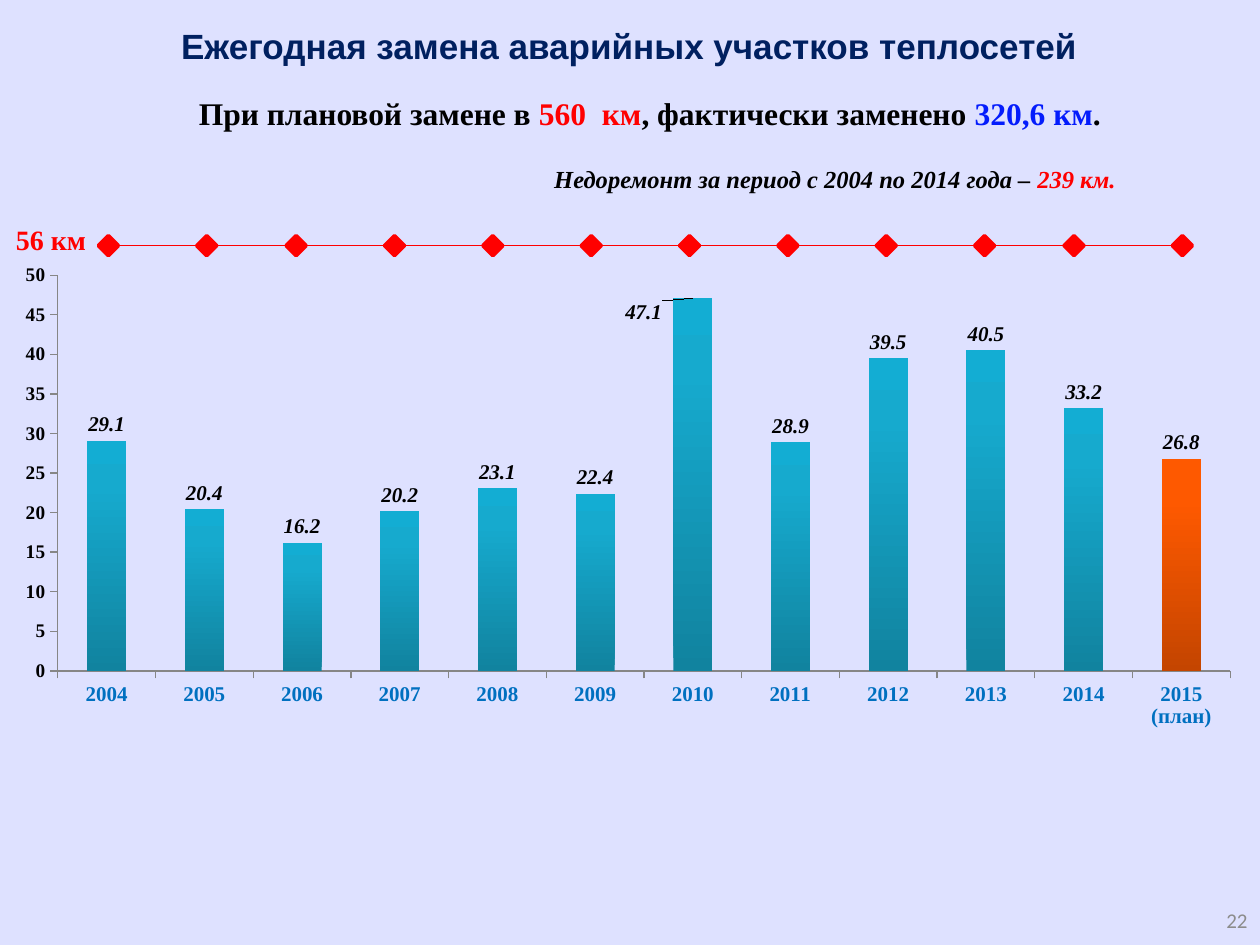
import copy
import itertools
from typing import NamedTuple

import pptx
import pptx.chart.data
import pptx.dml.color
import pptx.enum.chart
import pptx.enum.shapes
import pptx.enum.text
import pptx.oxml
import pptx.oxml.ns
import pptx.util

Pt = pptx.util.Pt
Align = pptx.enum.text.PP_ALIGN
Anchor = pptx.enum.text.MSO_ANCHOR

COLORS = {
    "background": "DEE1FF", "black": "000000", "red": "FF0000", "blue": "041CFC",
    "navy": "002060", "year": "0070C0", "axis": "868686", "number": "8C8C8C",
}
ACTUAL_STOPS = [(0, "11839F"), (0.8, "16AACE"), (1, "13ADD3")]
PLAN_STOPS = [(0, "C44500"), (0.8, "FE5900"), (1, "FF5A00")]
SERIF = "Times New Roman"

REPLACED_KM = {
    "2004": 29.1, "2005": 20.4, "2006": 16.2, "2007": 20.2, "2008": 23.1, "2009": 22.4,
    "2010": 47.1, "2011": 28.9, "2012": 39.5, "2013": 40.5, "2014": 33.2, "2015 (план)": 26.8,
}


class Box(NamedTuple):
    left: float
    top: float
    width: float
    height: float

    def lengths(self):
        return [Pt(value) for value in self]


class Run(NamedTuple):
    text: str
    color: str


def rgb(value: str):
    return pptx.dml.color.RGBColor.from_string(value)


def format_font(font, *, size: float, color: str = "black", name: str = SERIF,
                bold: bool = True, italic: bool = False) -> None:
    font.name, font.size, font.bold, font.italic = name, Pt(size), bold, italic
    font.color.rgb = rgb(COLORS[color])


def write_text(shape, runs: list[Run], *, align=Align.LEFT, anchor=Anchor.TOP, **font_format) -> None:
    frame = shape.text_frame
    frame.word_wrap = True
    frame.vertical_anchor = anchor
    paragraph = frame.paragraphs[0]
    paragraph.alignment = align
    for item in runs:
        run = paragraph.add_run()
        run.text = item.text
        format_font(run.font, color=item.color, **font_format)


def add_text(slide, box: Box, runs: list[Run], **text_format) -> None:
    write_text(slide.shapes.add_textbox(*box.lengths()), runs, **text_format)


def set_gradient(fill, stops: list[tuple[float, str]]) -> None:
    for stop, (position, color) in zip(fill.gradient_stops, stops):
        stop.position = position
        stop.color.rgb = rgb(color)
    fill.gradient_angle = 90


def layout_xml(**settings):
    """Manual chart layout; settings follow the schema order."""
    children = "".join(f'<c:{key} val="{value}"/>' for key, value in settings.items())
    return pptx.oxml.parse_xml(
        f'<c:layout {pptx.oxml.ns.nsdecls("c")}><c:manualLayout>{children}</c:manualLayout></c:layout>')


def format_axis(axis, **font_format) -> None:
    axis.has_major_gridlines = False
    axis.major_tick_mark = pptx.enum.chart.XL_TICK_MARK.OUTSIDE
    axis.format.line.color.rgb = rgb(COLORS["axis"])
    format_font(axis.tick_labels.font, **font_format)


def add_chart(slide, box: Box) -> None:
    data = pptx.chart.data.CategoryChartData()
    data.categories = list(REPLACED_KM)
    data.add_series("Series 1", list(REPLACED_KM.values()))
    chart = slide.shapes.add_chart(
        pptx.enum.chart.XL_CHART_TYPE.COLUMN_CLUSTERED, *box.lengths(), data).chart
    chart.has_legend = chart.has_title = False
    format_font(chart.font, size=18, name="Calibri", bold=False)

    # Axes
    format_axis(chart.category_axis, size=12, color="year")
    format_axis(chart.value_axis, size=11)
    chart.value_axis.minimum_scale, chart.value_axis.maximum_scale = 0, 50
    chart.value_axis.major_unit = 5

    # Columns: the planned year stands out in orange
    plot = chart.plots[0]
    plot.gap_width, plot.vary_by_categories = 150, False
    series = plot.series[0]
    fills = [series.format.fill, series.points[len(REPLACED_KM) - 1].format.fill]
    for fill in fills:
        fill.gradient()
    for stop_list in chart.element.xpath(".//c:ser//a:gsLst"):
        stop_list.append(copy.deepcopy(stop_list[-1]))
    for fill, stops in zip(fills, [ACTUAL_STOPS, PLAN_STOPS]):
        set_gradient(fill, stops)

    # Value labels; the tallest column has its label at the left
    labels = series.data_labels
    labels.show_value = True
    labels.position = pptx.enum.chart.XL_LABEL_POSITION.OUTSIDE_END
    format_font(labels.font, size=12, italic=True)
    tallest = list(REPLACED_KM).index("2010")
    tallest_label = series.points[tallest].data_label
    format_font(tallest_label.font, size=12, italic=True)
    tallest_label.position = pptx.enum.chart.XL_LABEL_POSITION.OUTSIDE_END
    chart.element.xpath(".//c:dLbl/c:idx")[0].addnext(layout_xml(x=-0.04, y=0.06))

    # Plot area
    plot_area = chart.element.xpath(".//c:plotArea")[0]
    for old_layout in plot_area.xpath("c:layout"):
        plot_area.remove(old_layout)
    plot_area.insert(0, layout_xml(layoutTarget="inner", xMode="edge", yMode="edge",
                                   x=0.047, y=0.059, w=0.953, h=0.789))


def add_plan_line(slide, left: float, right: float, y: float) -> None:
    line = slide.shapes.add_connector(
        pptx.enum.shapes.MSO_CONNECTOR.STRAIGHT, Pt(left), Pt(y), Pt(right), Pt(y))
    line.line.color.rgb = rgb(COLORS["red"])
    line.line.width = Pt(0.75)
    properties = line.element.xpath("p:spPr")[0]
    properties.append(pptx.oxml.parse_xml(f'<a:effectLst {pptx.oxml.ns.nsdecls("a")}/>'))


def add_diamond(slide, left: float, center_y: float, size: float = 11.5) -> None:
    box = Box(left, center_y - size / 2, size, size)
    diamond = slide.shapes.add_shape(pptx.enum.shapes.MSO_SHAPE.DIAMOND, *box.lengths())
    diamond.shadow.inherit = False
    diamond.fill.solid()
    diamond.fill.fore_color.rgb = rgb(COLORS["red"])
    diamond.line.color.rgb = rgb(COLORS["red"])
    diamond.line.width = Pt(2)


def main() -> None:
    presentation = pptx.Presentation()
    presentation.slide_width, presentation.slide_height = Pt(720), Pt(540)
    slide = presentation.slides.add_slide(presentation.slide_layouts.get_by_name("Title Only"))
    slide.background.fill.solid()
    slide.background.fill.fore_color.rgb = rgb(COLORS["background"])

    # Title
    title = slide.shapes.title
    title.left, title.top, title.width, title.height = Box(16.5, 0, 686, 52).lengths()
    write_text(title, [Run("Ежегодная замена аварийных участков теплосетей", "navy")],
               align=Align.CENTER, anchor=Anchor.MIDDLE, size=20, name="Arial")

    # Summary
    add_text(slide, Box(44.6, 50.4, 658, 29),
             [Run("При плановой замене в ", "black"), Run("560  км", "red"),
              Run(", фактически заменено ", "black"), Run("320,6 км", "blue"), Run(". ", "black")],
             align=Align.CENTER, size=18)
    add_text(slide, Box(309.6, 90, 399.6, 41),
             [Run("Недоремонт за период с 2004 по 2014 года – ", "black"), Run("239 км. ", "red")],
             align=Align.JUSTIFY, size=14, italic=True)

    add_chart(slide, Box(0, 140.4, 703.4, 286.6))

    # Yearly plan: one diamond a year along a line
    plan_y = 140.4
    add_plan_line(slide, 62, 669.6, plan_y)
    step, short_step, last_step = 56.2, 51.1, 61.9
    steps = [step, short_step] + [step] * 7 + [short_step, last_step]
    for left in itertools.accumulate(steps, initial=56.2):
        add_diamond(slide, left, plan_y)
    add_text(slide, Box(0, 123.8, 56.2, 26.6), [Run("56 км", "red")], align=Align.RIGHT, size=16)

    # Slide number
    add_text(slide, Box(552, 511.2, 168, 28.8), [Run("22", "number")], align=Align.RIGHT,
             anchor=Anchor.MIDDLE, size=12, name="Calibri", bold=False)

    presentation.save("out.pptx")


if __name__ == "__main__":
    main()
